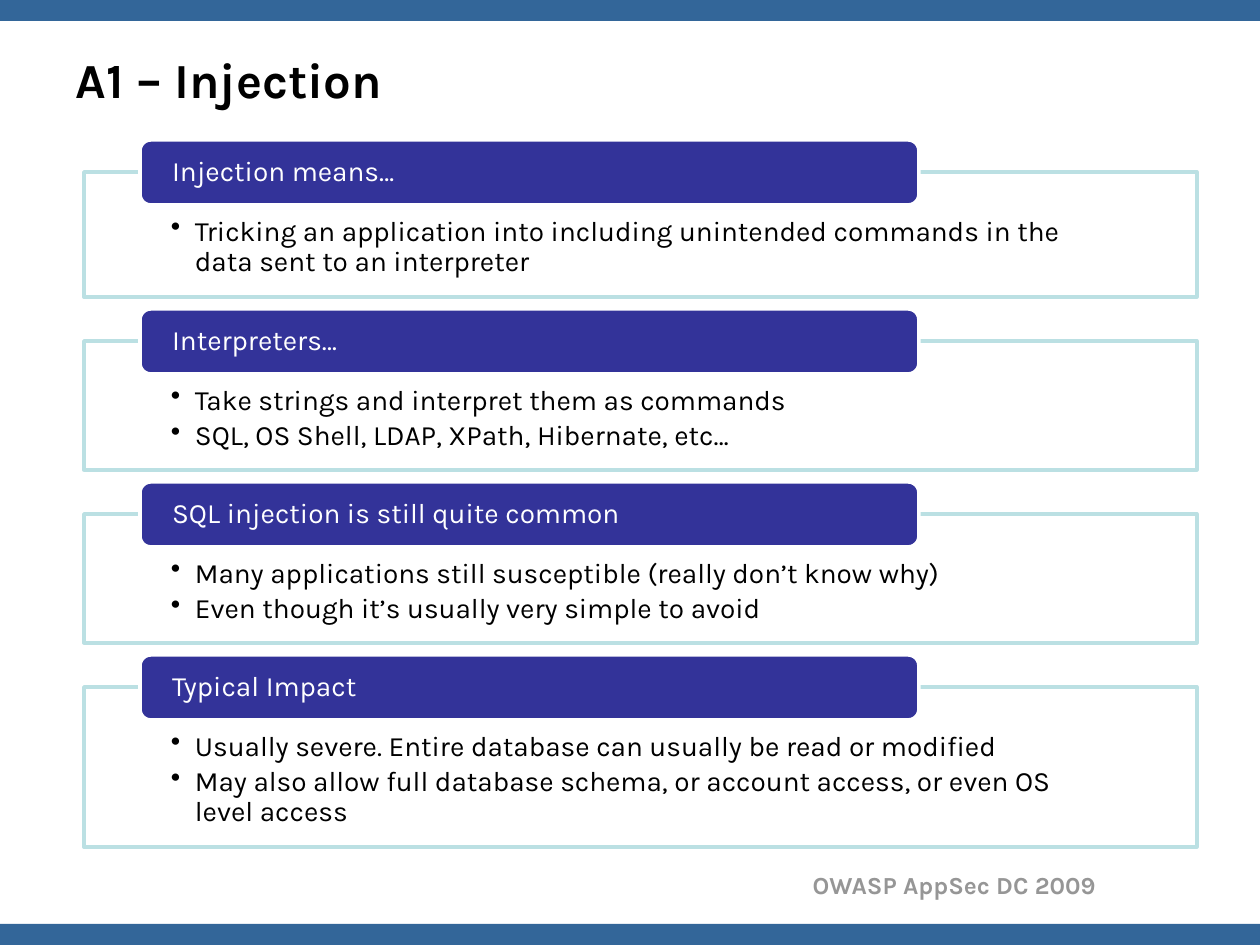
from lxml import etree
from pptx import Presentation
from pptx import util as u
from pptx.dml.color import RGBColor
from pptx.enum import shapes, text
from pptx.oxml import ns

PX = 914400 // 126
FONT = "Karla"
COLORS = {
    "band": "336699", "header": "333399", "outline": "BBE0E3",
    "white": "FFFFFF", "black": "000000", "footer": "969696",
}
TITLE = "A1 – Injection"
FOOTER = "OWASP AppSec DC 2009"
SECTIONS = [
    ("Injection means…", 125, [
        "Tricking an application into including unintended commands in the data sent to an interpreter",
    ]),
    ("Interpreters…", 129, [
        "Take strings and interpret them as commands",
        "SQL, OS Shell, LDAP, XPath, Hibernate, etc…",
    ]),
    ("SQL injection is still quite common", 129, [
        "Many applications still susceptible (really don’t know why)",
        "Even though it’s usually very simple to avoid",
    ]),
    ("Typical Impact", 160, [
        "Usually severe. Entire database can usually be read or modified",
        "May also allow full database schema, or account access, or even OS level access",
    ]),
]
PAGE_W, PAGE_H, BAND_H = 1260, 945, 21
PANEL_X, PANEL_Y, PANEL_W, PANEL_GAP = 84, 172, 1113, 44
HEADER_X, HEADER_W, HEADER_H, HEADER_RISE = 140, 779, 65, 32
BULLET_INDENT = 24


def color(name):
    return RGBColor.from_string(COLORS[name])


def add_box(page, kind, area, fill, line=None):
    box = page.shapes.add_shape(kind, *(n * PX for n in area))
    box.shadow.inherit = False
    box.fill.solid()
    box.fill.fore_color.rgb = color(fill)
    if line:
        box.line.color.rgb = color(line)
        box.line.width = u.Pt(2)
    else:
        box.line.fill.background()
    return box


def set_text(box, lines, size, ink, insets, anchor, align=text.PP_ALIGN.LEFT,
             bold=False, spacing=None, bulleted=False):
    frame = box.text_frame
    frame.word_wrap = True
    frame.vertical_anchor = anchor
    frame.margin_left, frame.margin_top, frame.margin_right, frame.margin_bottom = (
        n * PX for n in insets)
    frame.text = "\n".join(lines)
    for para in frame.paragraphs:
        para.alignment = align
        if spacing:
            para.line_spacing = spacing
        if bulleted:
            para.space_after = u.Pt(3)
            props = para._p.get_or_add_pPr()
            props.set("marL", str(BULLET_INDENT * PX))
            props.set("indent", str(-BULLET_INDENT * PX))
            etree.SubElement(props, ns.qn("a:buChar"), char="•")
        for span in para.runs:
            span.font.name = FONT
            span.font.size = u.Pt(size)
            span.font.bold = bold
            span.font.color.rgb = color(ink)


def add_label(page, area, line, size, ink, anchor, align):
    box = page.shapes.add_textbox(*(n * PX for n in area))
    set_text(box, [line], size, ink, (13, 6, 13, 6), anchor, align, bold=True)


def add_section(page, top, heading, height, bullets):
    panel = add_box(page, shapes.MSO_SHAPE.RECTANGLE,
                    (PANEL_X, top, PANEL_W, height), "white", "outline")
    tint = panel.fill._xPr.find(ns.qn("a:solidFill"))[0]
    etree.SubElement(tint, ns.qn("a:alpha"), val="90000")
    set_text(panel, bullets, 16, "black", (87, 45, 87, 15),
             text.MSO_ANCHOR.TOP, spacing=0.9, bulleted=True)
    header = add_box(page, shapes.MSO_SHAPE.ROUNDED_RECTANGLE,
                     (HEADER_X, top - HEADER_RISE, HEADER_W, HEADER_H), "header", "white")
    set_text(header, [heading], 16, "white", (29, 0, 29, 0),
             text.MSO_ANCHOR.MIDDLE, spacing=0.9)


def main():
    deck = Presentation()
    deck.slide_width, deck.slide_height = u.Inches(10), u.Inches(7.5)
    page = deck.slides.add_slide(deck.slide_layouts[6])
    for top in (0, PAGE_H - BAND_H):
        add_box(page, shapes.MSO_SHAPE.RECTANGLE, (0, top, PAGE_W, BAND_H), "band")
    add_label(page, (683, 864, 426, 43), FOOTER, 14, "footer",
              text.MSO_ANCHOR.TOP, text.PP_ALIGN.RIGHT)
    add_label(page, (63, 24, 1134, 110), TITLE, 28, "black",
              text.MSO_ANCHOR.MIDDLE, text.PP_ALIGN.LEFT)
    top = PANEL_Y
    for heading, height, bullets in SECTIONS:
        add_section(page, top, heading, height, bullets)
        top += height + PANEL_GAP
    deck.save("out.pptx")


if __name__ == "__main__":
    main()
